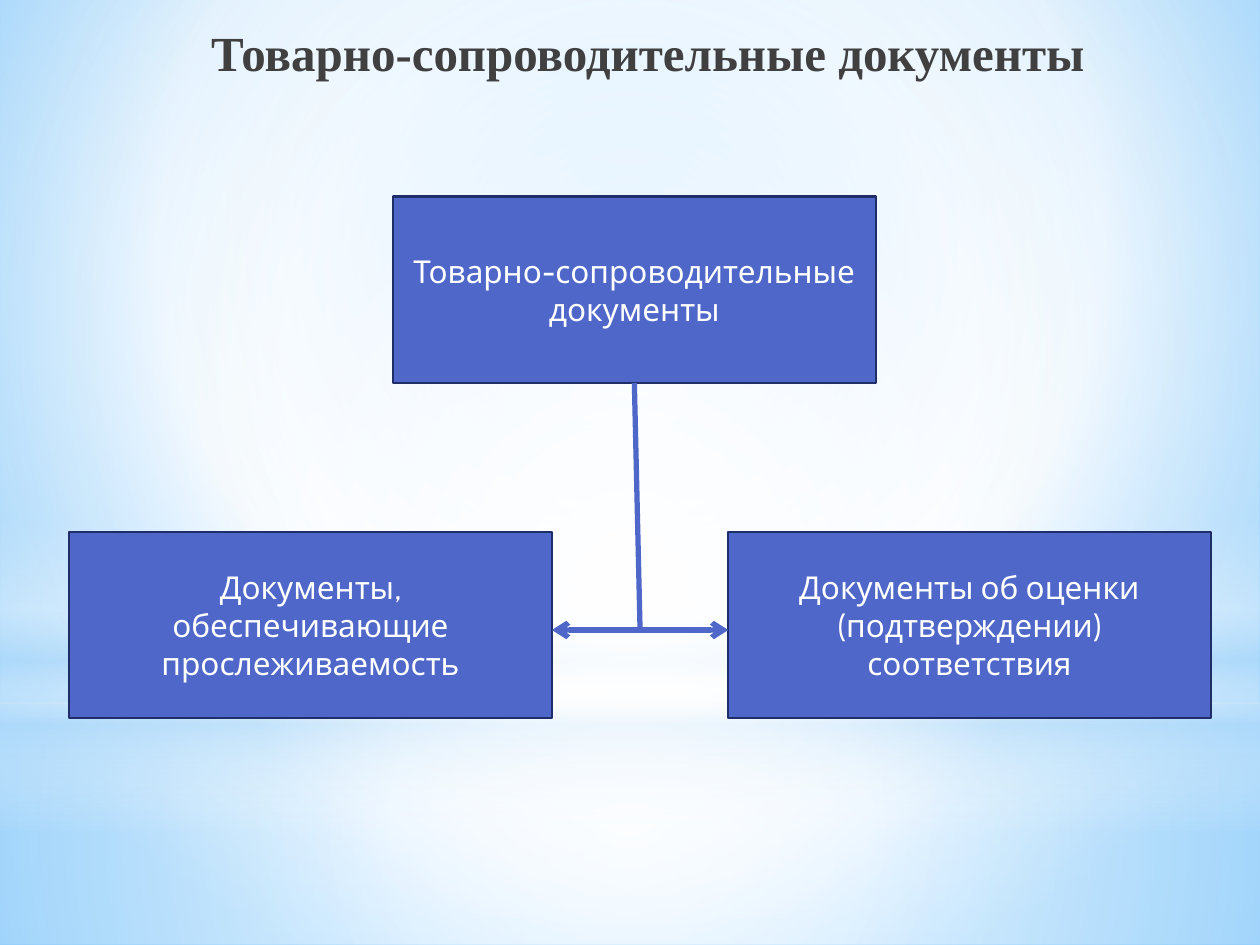
from lxml import etree
from pptx import Presentation
from pptx.dml.color import RGBColor
from pptx.enum.shapes import MSO_CONNECTOR as CONN, MSO_SHAPE as SHAPE
from pptx.enum.text import MSO_ANCHOR as ANCHOR, PP_ALIGN as ALIGN
from pptx.oxml import parse_xml
from pptx.oxml.ns import nsdecls, qn
from pptx.util import Inches, Pt

BLUE = RGBColor(0x4E, 0x67, 0xC8)
NAVY = RGBColor(0x1F, 0x2E, 0x69)
GREY = RGBColor(0x40, 0x40, 0x40)
WHITE = RGBColor(0xFF, 0xFF, 0xFF)

TITLE = "Товарно-сопроводительные документы"
BOX_W, BOX_H = 3.83, 1.48
BOXES = {
    "parent": (3.12, 1.56, "Товарно-сопроводительные документы"),
    "right": (5.78, 4.22, "Документы об оценки (подтверждении) соответствия"),
    "left": (0.55, 4.22, "Документы, обеспечивающие прослеживаемость"),
}
ARROW_Y = 5
JOINT_X = 5.08

CENTER = (50, 50, 50, 50)
BACKGROUND = [(0, "9ED5FF", 100), (60, "FFFFFF", 100), (100, "5BB9FF", 100)]
GLOWS = [
    (SHAPE.RECTANGLE, 5.58, 1.92, CENTER,
     [(0, "FFFFFF", 91), (37, "FFFFFF", 76), (100, "B4DCFA", 79)]),
    (SHAPE.RECTANGLE, 0, 5.58, CENTER,
     [(0, "FFFFFF", 89), (48, "FFFFFF", 62), (100, "B4DCFA", 79)]),
    (SHAPE.RECTANGLE, 4.12, 2.5, None,
     [(0, "FFFFFF", 0), (29, "FFFFFF", 30), (45, "B4DCFA", 40),
      (55, "FFFFFF", 26), (65, "B4DCFA", 60), (100, "FFFFFF", 0)]),
    (SHAPE.OVAL, 1.75, 5.58, CENTER,
     [(0, "FFFFFF", 100), (56, "FFFFFF", 0)]),
]


def set_gradient(fill, element, stops, focus):
    fill.background()
    gs = "".join(
        f'<a:gs pos="{pos * 1000}"><a:srgbClr val="{color}">'
        f'<a:alpha val="{alpha * 1000}"/></a:srgbClr></a:gs>'
        for pos, color, alpha in stops)
    if focus:
        sides = " ".join(f'{k}="{v * 1000}"' for k, v in zip("ltrb", focus))
        shade = f'<a:path path="circle"><a:fillToRect {sides}/></a:path>'
    else:
        shade = '<a:lin ang="5400000" scaled="0"/>'
    grad = parse_xml(f'<a:gradFill {nsdecls("a")} rotWithShape="1">'
                     f'<a:gsLst>{gs}</a:gsLst>{shade}</a:gradFill>')
    empty = element.find(".//" + qn("a:noFill"))
    empty.getparent().replace(empty, grad)


def write(tf, text, font, size, color, bold=False):
    tf.word_wrap = True
    tf.text = text
    p = tf.paragraphs[0]
    p.alignment = ALIGN.CENTER
    f = p.runs[0].font
    f.name, f.size, f.bold = font, Pt(size), bold
    f.color.rgb = color
    return p


def add_box(s, x, y, text):
    sp = s.shapes.add_shape(SHAPE.RECTANGLE, Inches(x), Inches(y),
                            Inches(BOX_W), Inches(BOX_H))
    sp.shadow.inherit = False
    sp.fill.solid()
    sp.fill.fore_color.rgb = BLUE
    sp.line.color.rgb = NAVY
    sp.line.width = Pt(1.25)
    sp.text_frame.vertical_anchor = ANCHOR.MIDDLE
    write(sp.text_frame, text, "Cabin", 18, WHITE)
    return sp


def add_line(s, x1, y1, x2, y2, ends=()):
    line = s.shapes.add_connector(CONN.STRAIGHT, Inches(x1), Inches(y1),
                                  Inches(x2), Inches(y2))
    line.line.color.rgb = BLUE
    line.line.width = Pt(3)
    ln = line.line._get_or_add_ln()
    for end in ends:
        etree.SubElement(ln, qn(f"a:{end}"), type="arrow")
    etree.SubElement(line._element.spPr, qn("a:effectLst"))
    return line


def main():
    prs = Presentation()
    prs.slide_width, prs.slide_height = Inches(10), Inches(7.5)
    s = prs.slides.add_slide(prs.slide_layouts[6])
    set_gradient(s.background.fill, s.element, BACKGROUND, (20, 10, 20, 60))

    for kind, top, height, focus, stops in GLOWS:
        sp = s.shapes.add_shape(kind, 0, Inches(top), Inches(10), Inches(height))
        sp.shadow.inherit = False
        set_gradient(sp.fill, sp._element, stops, focus)
        sp.line.fill.background()

    title = s.shapes.add_textbox(Inches(0.51), Inches(0.13), Inches(9.06), Inches(1.1))
    p = write(title.text_frame, TITLE, "Times New Roman", 28, GREY, bold=True)
    p._p.get_or_add_pPr().set("marL", str(Inches(0.2)))

    boxes = {name: add_box(s, *box) for name, box in BOXES.items()}

    left_x, right_x = BOXES["left"][0] + BOX_W, BOXES["right"][0]
    parent_x, parent_y, _ = BOXES["parent"]
    stem = add_line(s, parent_x + BOX_W / 2, parent_y + BOX_H, JOINT_X, ARROW_Y)
    stem.begin_connect(boxes["parent"], 2)
    add_line(s, left_x, ARROW_Y, right_x, ARROW_Y, ("headEnd", "tailEnd"))

    prs.save("out.pptx")


if __name__ == "__main__":
    main()
